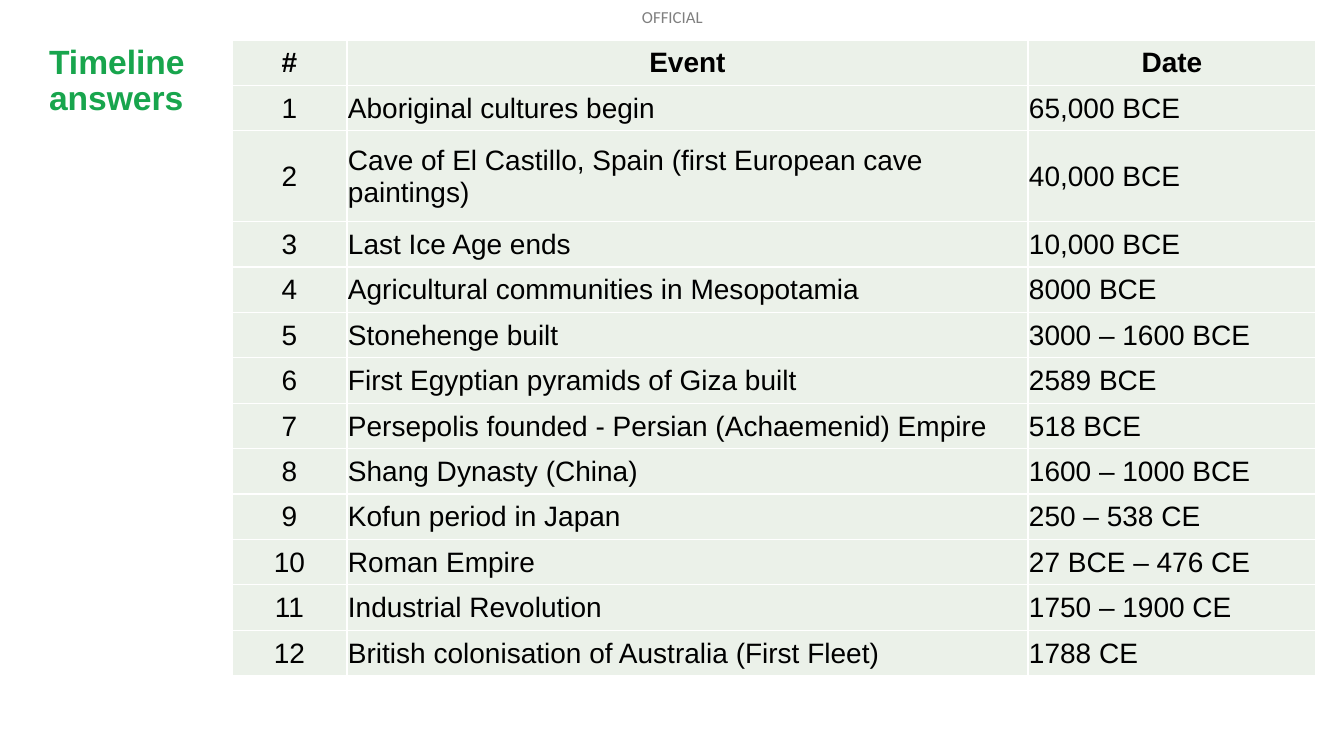
"""Build the timeline answers slide with its table of events and dates."""
from lxml import etree
from pptx import Presentation
from pptx.dml.color import RGBColor
from pptx.enum.text import MSO_ANCHOR, MSO_AUTO_SIZE, PP_ALIGN
from pptx.oxml.ns import qn
from pptx.util import Emu, Pt

LEFT, CENTER = PP_ALIGN.LEFT, PP_ALIGN.CENTER
TOP, MIDDLE = MSO_ANCHOR.TOP, MSO_ANCHOR.MIDDLE
NO_FIT = MSO_AUTO_SIZE.NONE

MARKING = "OFFICIAL"
TITLE = "Timeline answers"
HEADER = ("#", "Event", "Date")
EVENTS = [
    ("Aboriginal cultures begin", "65,000 BCE"),
    ("Cave of El Castillo, Spain (first European cave paintings)", "40,000 BCE"),
    ("Last Ice Age ends", "10,000 BCE"),
    ("Agricultural communities in Mesopotamia", "8000 BCE"),
    ("Stonehenge built", "3000 – 1600 BCE"),
    ("First Egyptian pyramids of Giza built", "2589 BCE"),
    ("Persepolis founded - Persian (Achaemenid) Empire", "518 BCE"),
    ("Shang Dynasty (China)", "1600 – 1000 BCE"),
    ("Kofun period in Japan", "250 – 538 CE"),
    ("Roman Empire", "27 BCE – 476 CE"),
    ("Industrial Revolution", "1750 – 1900 CE"),
    ("British colonisation of Australia (First Fleet)", "1788 CE"),
]
COLORS = {"text": "000000", "title": "18A54D", "cell": "EBF1E9", "border": "FFFFFF"}

PAGE_SIZE = (1344, 756)
MARKING_BOX = (642, 7, 64, 20)
TITLE_BOX = (49, 45, 160, 97)
TABLE_LEFT, TABLE_TOP, TABLE_HEIGHT = 232, 40, 636
COLUMN_WIDTHS = (115, 681, 288)
TALL_ROW = 2


def px(length):
    return Emu(round(length * 914400 / 100.8))


def add_text(para, text, size, color, font="Arial", bold=False):
    span = para.add_run()
    span.text = text
    span.font.name, span.font.size, span.font.bold = font, Pt(size), bold
    span.font.color.rgb = RGBColor.from_string(COLORS[color])
    return span


def prepare_frame(frame, wrap):
    frame.margin_left = frame.margin_right = frame.margin_top = frame.margin_bottom = 0
    frame.auto_size, frame.word_wrap, frame.vertical_anchor = NO_FIT, wrap, TOP
    para = frame.paragraphs[0]
    para.alignment = LEFT
    return para


def add_borders(cell):
    properties = cell._tc.get_or_add_tcPr()
    for position, side in enumerate(("lnL", "lnR", "lnT", "lnB")):
        line = etree.Element(qn("a:" + side), w=str(Pt(1)))
        fill = etree.SubElement(line, qn("a:solidFill"))
        etree.SubElement(fill, qn("a:srgbClr"), val=COLORS["border"])
        properties.insert(position, line)


def add_marking(page):
    box = page.shapes.add_textbox(*map(px, MARKING_BOX))
    para = prepare_frame(box.text_frame, False)
    span = add_text(para, MARKING, 12, "text", "Calibri")
    color = span._r.find(".//" + qn("a:srgbClr"))
    etree.SubElement(color, qn("a:alpha"), val="50000")


def add_title(page):
    title = page.shapes.title
    title.left, title.top, title.width, title.height = map(px, TITLE_BOX)
    para = prepare_frame(title.text_frame, True)
    para.line_spacing = 0.9
    add_text(para, TITLE, 24, "title", bold=True)


def add_timeline(page):
    rows = [HEADER] + [(str(number), *event) for number, event in enumerate(EVENTS, 1)]
    row_height = TABLE_HEIGHT / (len(rows) + 1)
    area = (TABLE_LEFT, TABLE_TOP, sum(COLUMN_WIDTHS), TABLE_HEIGHT)
    table = page.shapes.add_table(len(rows), len(HEADER), *map(px, area)).table
    table.horz_banding = False
    for column, width in zip(table.columns, COLUMN_WIDTHS):
        column.width = px(width)
    for row_index, row in enumerate(rows):
        table.rows[row_index].height = px(row_height * (2 if row_index == TALL_ROW else 1))
        for column_index, text in enumerate(row):
            cell = table.cell(row_index, column_index)
            cell.margin_left = cell.margin_right = cell.margin_top = px(1)
            cell.margin_bottom = 0
            cell.vertical_anchor = MIDDLE
            cell.fill.solid()
            cell.fill.fore_color.rgb = RGBColor.from_string(COLORS["cell"])
            add_borders(cell)
            para = cell.text_frame.paragraphs[0]
            para.alignment = CENTER if row_index == 0 or column_index == 0 else LEFT
            add_text(para, text, 20, "text", bold=row_index == 0)


def main():
    deck = Presentation()
    deck.slide_width, deck.slide_height = map(px, PAGE_SIZE)
    page = deck.slides.add_slide(deck.slide_layouts[5])
    add_marking(page)
    add_title(page)
    add_timeline(page)
    deck.save("out.pptx")


if __name__ == "__main__":
    main()
